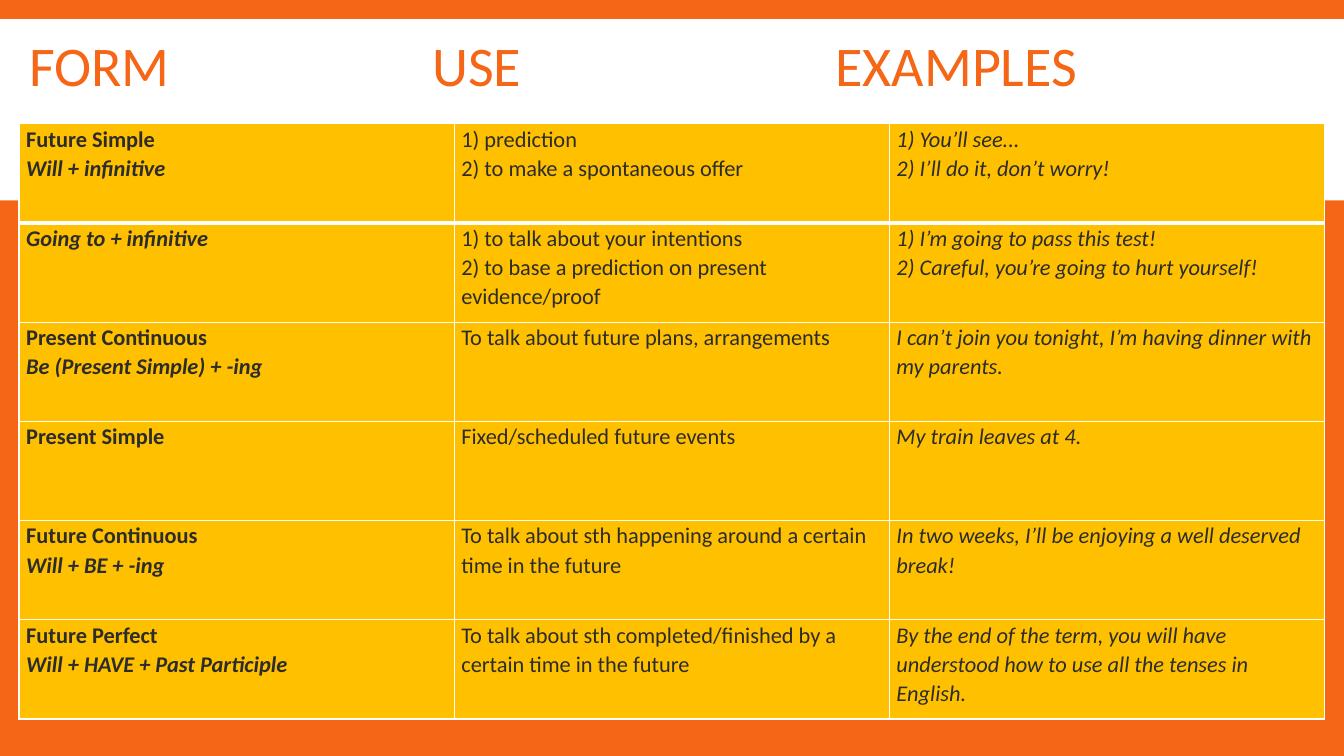
import pptx
import pptx.dml.color
import pptx.enum.shapes
import pptx.enum.text
import pptx.oxml
import pptx.oxml.ns
import pptx.util
from pptx.util import Cm

# Content: tense and formula, uses, examples
HEADINGS = ["FORM", "USE", "EXAMPLES"]
ROWS = [
    ("Future Simple", "Will + infinitive",
     ["1) prediction", "2) to make a spontaneous offer"],
     ["1) You’ll see...", "2) I’ll do it, don’t worry!"]),
    (None, "Going to + infinitive",
     ["1) to talk about your intentions",
      "2) to base a prediction on present evidence/proof"],
     ["1) I’m going to pass this test!",
      "2) Careful, you’re going to hurt yourself!"]),
    ("Present Continuous", "Be (Present Simple) + -ing",
     ["To talk about future plans, arrangements"],
     ["I can’t join you tonight, I’m having dinner with my parents."]),
    ("Present Simple", None,
     ["Fixed/scheduled future events"],
     ["My train leaves at 4."]),
    ("Future Continuous", "Will + BE + -ing",
     ["To talk about sth happening around a certain time in the future"],
     ["In two weeks, I’ll be enjoying a well deserved break!"]),
    ("Future Perfect", "Will + HAVE + Past Participle",
     ["To talk about sth completed/finished by a certain time in the future"],
     ["By the end of the term, you will have understood how to use all "
      "the tenses in English."]),
]

# Theme and layout
THEME = {"orange": "F56617", "white": "FFFFFF", "amber": "FFC000",
         "ink": "2C2C2C", "font": "Calibri", "title": 40, "body": 16}
SLIDE_W, SLIDE_H = Cm(33.87), Cm(19.05)
LEFT, WIDTH = Cm(0.48), Cm(32.9)
TITLE_TOP, TITLE_H = Cm(0.79), Cm(1.93)
BAND_TOP, BAND_H = Cm(0.48), Cm(4.57)
TABLE_TOP, ROW_H = Cm(3.12), Cm(2.5)
TAB_STEP = Cm(10.16)
CELL_FORMAT = {"margin_left": Cm(0.18), "margin_right": Cm(0.18),
               "margin_top": 0, "margin_bottom": 0}


def rgb(name):
    return pptx.dml.color.RGBColor.from_string(THEME[name])


def paint(fill, name):
    fill.solid()
    fill.fore_color.rgb = rgb(name)


def set_format(obj, values):
    for name, value in values.items():
        setattr(obj, name, value)


def style_font(font, size, color, bold=False, italic=False):
    set_format(font, {"name": THEME["font"], "size": pptx.util.Pt(THEME[size]),
                      "bold": bold, "italic": italic})
    font.color.rgb = rgb(color)


def add_border(cell, side, points):
    ns = pptx.oxml.ns.nsdecls("a")
    cell._tc.get_or_add_tcPr().append(pptx.oxml.parse_xml(
        f'<a:ln{side} {ns} w="{pptx.util.Pt(points)}"><a:solidFill>'
        f'<a:srgbClr val="{THEME["white"]}"/></a:solidFill></a:ln{side}>'))


def write_cell(cell, lines):
    """Fill a cell with (text, bold, italic) lines."""
    set_format(cell, CELL_FORMAT)
    tf = cell.text_frame
    for i, (text, bold, italic) in enumerate(lines):
        p = tf.add_paragraph() if i else tf.paragraphs[0]
        p.line_spacing = 1.07
        r = p.add_run()
        r.text = text
        style_font(r.font, "body", "ink", bold, italic)


def add_band(slide):
    sp = slide.shapes.add_shape(pptx.enum.shapes.MSO_SHAPE.RECTANGLE,
                                0, BAND_TOP, SLIDE_W, BAND_H)
    sp.shadow.inherit = False
    paint(sp.fill, "white")
    sp.line.fill.background()
    slide.shapes._spTree.insert(2, sp._element)  # behind the title


def add_title(slide):
    sp = slide.shapes.title
    set_format(sp, {"left": LEFT, "top": TITLE_TOP,
                    "width": WIDTH, "height": TITLE_H})
    tf = sp.text_frame
    set_format(tf, {"word_wrap": True,
                    "vertical_anchor": pptx.enum.text.MSO_ANCHOR.MIDDLE})
    p = tf.paragraphs[0]
    set_format(p, {"alignment": pptx.enum.text.PP_ALIGN.LEFT,
                   "line_spacing": 0.85})
    stops = "".join(f'<a:tab pos="{TAB_STEP * n}" algn="l"/>'
                    for n in range(1, len(HEADINGS)))
    p._p.get_or_add_pPr().append(pptx.oxml.parse_xml(
        f'<a:tabLst {pptx.oxml.ns.nsdecls("a")}>{stops}</a:tabLst>'))
    r = p.add_run()
    r.text = "\t".join(HEADINGS)
    style_font(r.font, "title", "orange")


def add_tenses(slide):
    n_rows, n_cols = len(ROWS), len(HEADINGS)
    table = slide.shapes.add_table(n_rows, n_cols, LEFT, TABLE_TOP,
                                   WIDTH, ROW_H * n_rows).table
    for row in table.rows:
        row.height = ROW_H
    for i, (tense, formula, uses, examples) in enumerate(ROWS):
        form = [(tense, True, False), (formula, True, True)]
        columns = [[line for line in form if line[0]],
                   [(text, False, False) for text in uses],
                   [(text, False, True) for text in examples]]
        for j, lines in enumerate(columns):
            cell = table.cell(i, j)
            write_cell(cell, lines)
            # A heavier rule divides the first row from the rest
            borders = {"L": 1, "R": 1, "T": 3 if i == 1 else 1,
                       "B": 3 if i == 0 else 1}
            for side, points in borders.items():
                add_border(cell, side, points)
            paint(cell.fill, "amber")


def main():
    prs = pptx.Presentation()
    set_format(prs, {"slide_width": SLIDE_W, "slide_height": SLIDE_H})
    slide = prs.slides.add_slide(prs.slide_layouts.get_by_name("Title Only"))
    paint(slide.background.fill, "orange")
    add_band(slide)
    add_title(slide)
    add_tenses(slide)
    prs.save("out.pptx")


if __name__ == "__main__":
    main()
